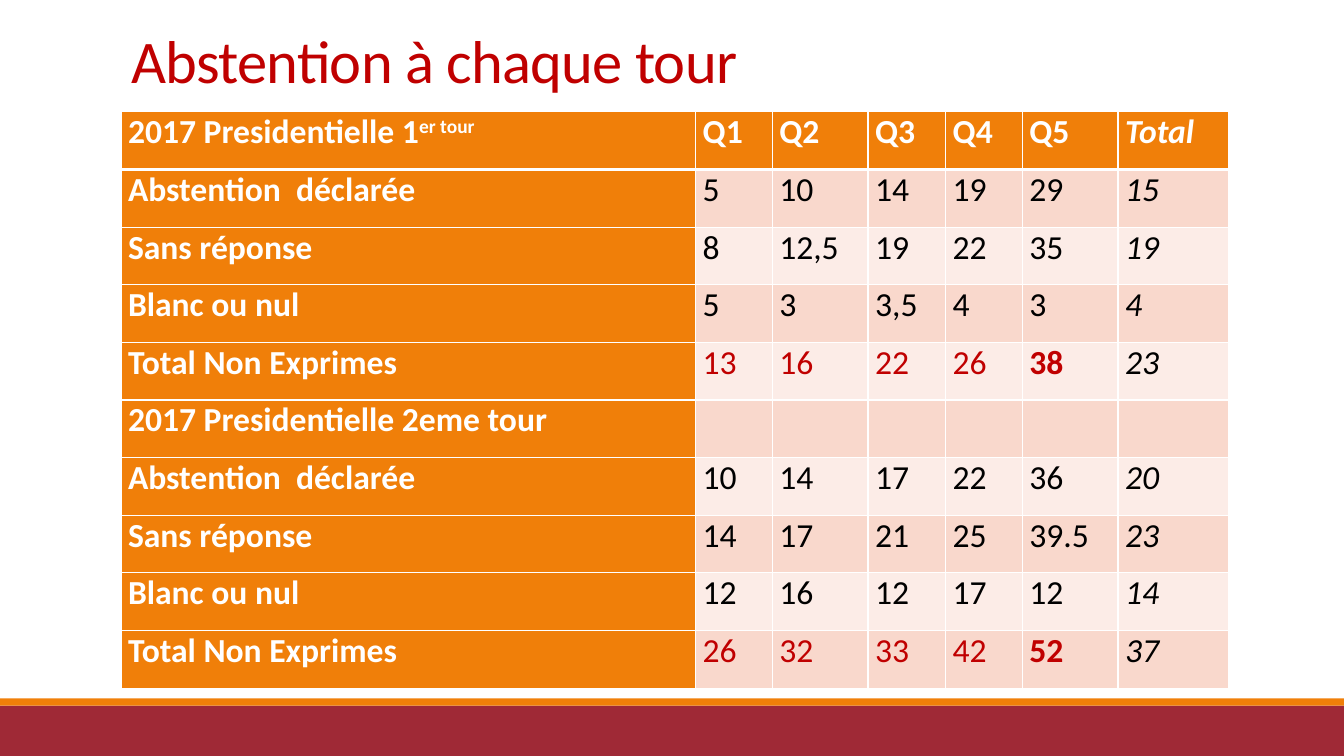
from dataclasses import dataclass

from lxml.etree import SubElement
from pptx import Presentation
from pptx.dml.color import RGBColor
from pptx.enum.shapes import MSO_SHAPE
from pptx.enum.text import MSO_ANCHOR, PP_ALIGN
from pptx.oxml.ns import qn
from pptx.util import Inches, Pt

TITLE = "Abstention à chaque tour"
HEADER = ["2017 Presidentielle 1", "Q1", "Q2", "Q3", "Q4", "Q5", "Total"]
HEADER_SUPERSCRIPT = "er tour"
TOTAL_LABEL = "Total Non Exprimes"
ROWS = [
    HEADER,
    ["Abstention  déclarée", "5", "10", "14", "19", "29", "15"],
    ["Sans réponse", "8", "12,5", "19", "22", "35", "19"],
    ["Blanc ou nul", "5", "3", "3,5", "4", "3", "4"],
    [TOTAL_LABEL, "13", "16", "22", "26", "38", "23"],
    ["2017 Presidentielle 2eme tour", "", "", "", "", "", ""],
    ["Abstention  déclarée", "10", "14", "17", "22", "36", "20"],
    ["Sans réponse", "14", "17", "21", "25", "39.5", "23"],
    ["Blanc ou nul", "12", "16", "12", "17", "12", "14"],
    [TOTAL_LABEL, "26", "32", "33", "42", "52", "37"],
]
COLUMN_WIDTHS = [5.7, 0.76, 0.95, 0.77, 0.76, 0.95, 1.1]
Q5_COLUMN, TOTAL_COLUMN = 5, 6

SLIDE_WIDTH, SLIDE_HEIGHT = 13.33, 7.5
LEFT, CONTENT_WIDTH = 1.2, 11
TITLE_TOP, TITLE_HEIGHT = 0.26, 0.74
TABLE_TOP, TABLE_HEIGHT = 1.11, 5.72
FOOTER_HEIGHT, STRIPE_HEIGHT = 0.5, 0.07
CELL_MARGIN = 0.07


@dataclass(frozen=True)
class Theme:
    font: str = "Calibri"
    title_size: float = 43.2
    cell_size: float = 24
    border: float = 1
    header_border: float = 3
    red: str = "C00000"
    footer: str = "9F2936"
    orange: str = "F07F09"
    bands: tuple = ("FCECE7", "F9D8CC")
    white: str = "FFFFFF"
    black: str = "000000"


THEME = Theme()


def add_span(para, text, size, color, bold=False, italic=False):
    span = para.add_run()
    span.text = text
    font = span.font
    font.name, font.size, font.bold, font.italic = THEME.font, Pt(size), bold, italic
    font.color.rgb = RGBColor.from_string(color)
    return span


def add_bar(page, top, height, color):
    bar = page.shapes.add_shape(
        MSO_SHAPE.RECTANGLE, 0, Inches(top), Inches(SLIDE_WIDTH), Inches(height))
    bar.shadow.inherit = False
    bar.fill.solid()
    bar.fill.fore_color.rgb = RGBColor.from_string(color)
    bar.line.fill.background()


def set_borders(cell, row):
    """Draw white cell edges, with a heavier rule below the header row."""
    properties = cell._tc.get_or_add_tcPr()
    for side in "LRTB":
        heavy = (row, side) in ((0, "B"), (1, "T"))
        width = THEME.header_border if heavy else THEME.border
        edge = SubElement(properties, qn(f"a:ln{side}"), w=str(Pt(width)))
        fill = SubElement(edge, qn("a:solidFill"))
        SubElement(fill, qn("a:srgbClr"), val=THEME.white)


def fill_cell(cell, row, column, text):
    heading = row == 0 or column == 0
    total = ROWS[row][0] == TOTAL_LABEL and column != TOTAL_COLUMN
    set_borders(cell, row)
    cell.fill.solid()
    cell.fill.fore_color.rgb = RGBColor.from_string(
        THEME.orange if heading else THEME.bands[row % 2])
    cell.margin_left = cell.margin_right = Inches(CELL_MARGIN)
    cell.margin_top = cell.margin_bottom = 0
    para = cell.text_frame.paragraphs[0]
    para.font.size = Pt(THEME.cell_size)
    if not text:
        return
    color = THEME.white if heading else THEME.red if total else THEME.black
    bold = heading or (total and column == Q5_COLUMN)
    add_span(para, text, THEME.cell_size, color, bold, column == TOTAL_COLUMN)
    if row == column == 0:
        suffix = add_span(para, HEADER_SUPERSCRIPT, THEME.cell_size, color, bold)
        suffix.font._element.set("baseline", "30000")


def add_title(page):
    title = page.shapes.title
    title.left, title.top = Inches(LEFT), Inches(TITLE_TOP)
    title.width, title.height = Inches(CONTENT_WIDTH), Inches(TITLE_HEIGHT)
    title.text_frame.vertical_anchor = MSO_ANCHOR.BOTTOM
    para = title.text_frame.paragraphs[0]
    para.alignment = PP_ALIGN.LEFT
    para.line_spacing = 0.85
    span = add_span(para, TITLE, THEME.title_size, THEME.red)
    span.font._element.set("spc", "-50")


def add_results(page):
    table = page.shapes.add_table(
        len(ROWS), len(HEADER), Inches(LEFT), Inches(TABLE_TOP),
        Inches(CONTENT_WIDTH), Inches(TABLE_HEIGHT)).table
    table.first_col = True
    for column, width in zip(table.columns, COLUMN_WIDTHS):
        column.width = Inches(width)
    for row, values in enumerate(ROWS):
        for column, text in enumerate(values):
            fill_cell(table.cell(row, column), row, column, text)


def main():
    deck = Presentation()
    deck.slide_width, deck.slide_height = Inches(SLIDE_WIDTH), Inches(SLIDE_HEIGHT)
    page = deck.slides.add_slide(deck.slide_layouts[5])
    footer_top = SLIDE_HEIGHT - FOOTER_HEIGHT
    add_bar(page, footer_top, FOOTER_HEIGHT, THEME.footer)
    add_bar(page, footer_top - STRIPE_HEIGHT, STRIPE_HEIGHT, THEME.orange)
    add_title(page)
    add_results(page)
    deck.save("out.pptx")


if __name__ == "__main__":
    main()
